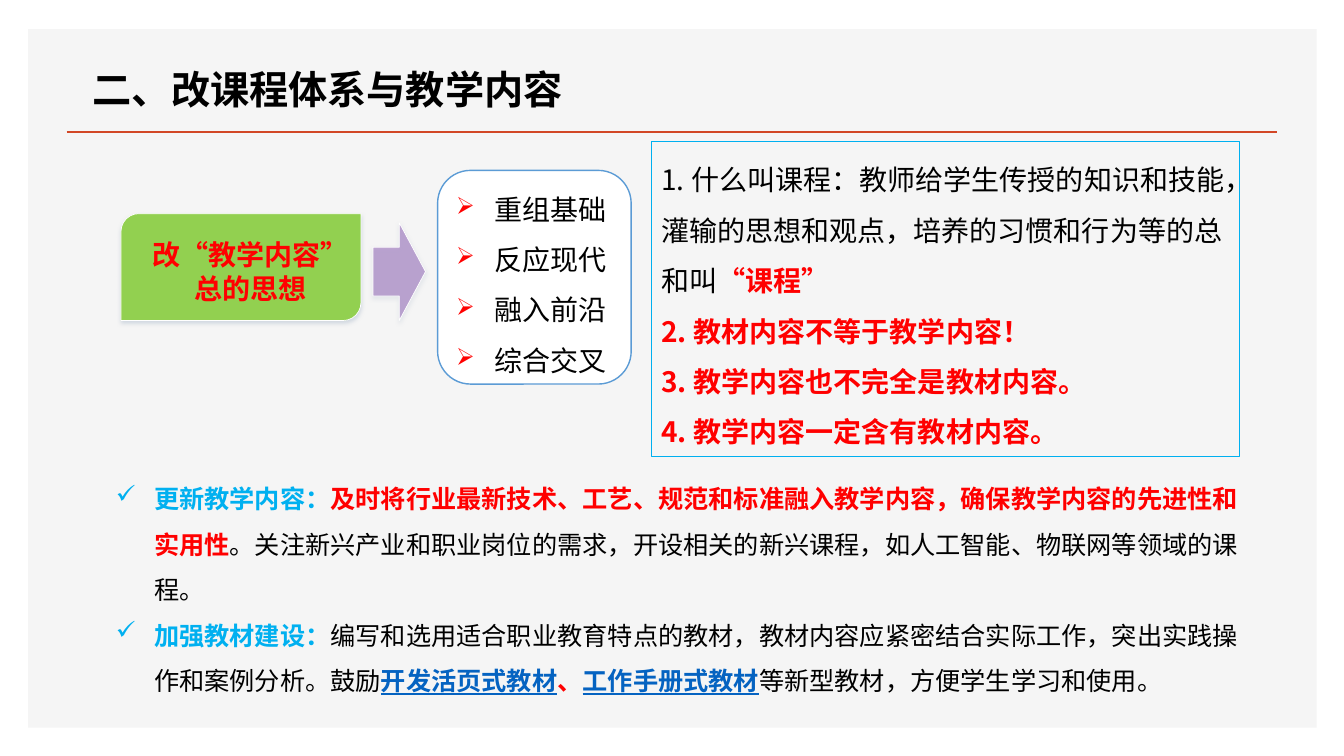
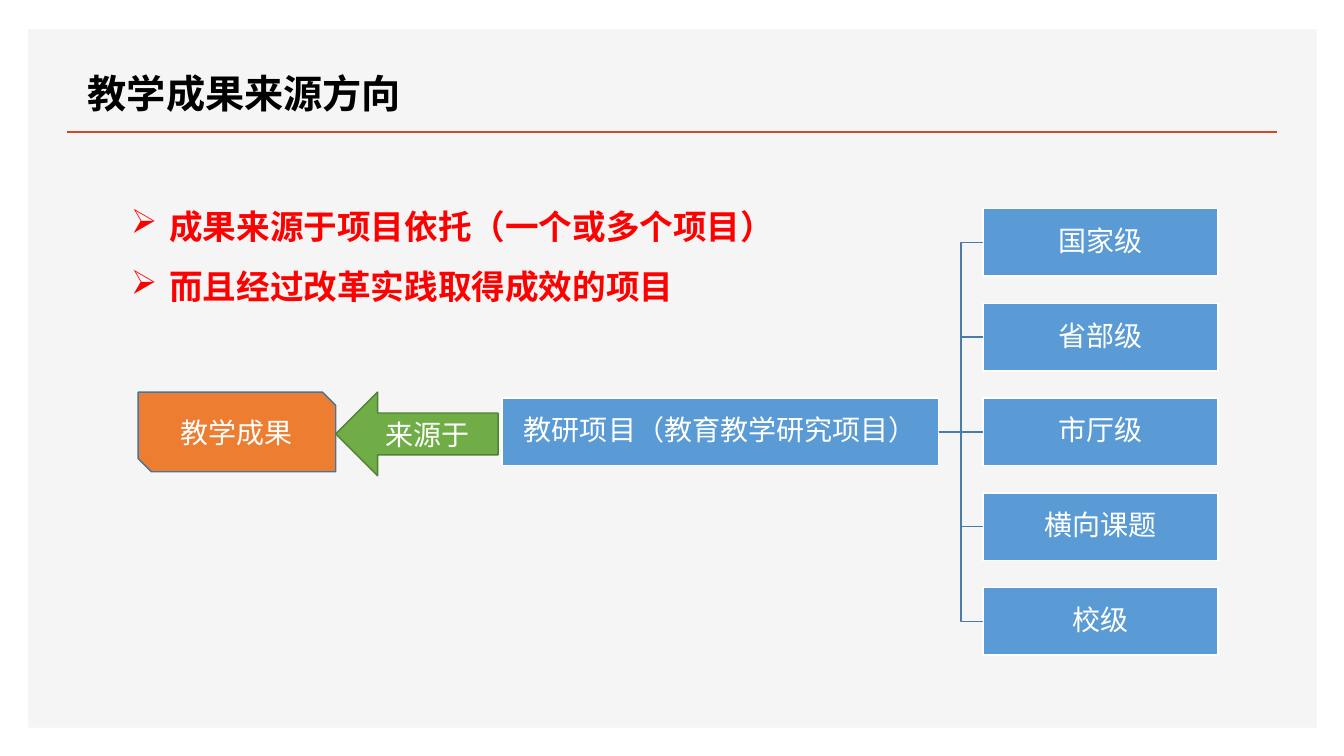
from dataclasses import dataclass

from lxml.etree import SubElement
from pptx import Presentation
from pptx.dml.color import RGBColor
from pptx.enum.shapes import MSO_CONNECTOR, MSO_SHAPE
from pptx.enum.text import MSO_ANCHOR, PP_ALIGN
from pptx.oxml.ns import qn
from pptx.util import Inches, Pt


@dataclass(frozen=True)
class Theme:
    sans: str = "Noto Sans CJK SC"
    lato: str = "Lato"
    black: str = "000000"
    white: str = "FFFFFF"
    panel: str = "F5F5F5"
    rule: str = "D24726"
    red: str = "FF0000"
    cyan: str = "00B0F0"
    link: str = "0563C1"
    blue: str = "5B9BD5"
    wire: str = "497CAB"
    edge: str = "43739E"
    lime: str = "92D050"
    purple: str = "7030A0"
    orange: str = "ED7D31"
    green: str = "70AD47"
    moss: str = "538035"
    shade: str = "CCD4DE"
    title: int = 28
    lead: int = 24
    text: int = 20
    body: int = 18


T = Theme()


def rgb(code):
    return RGBColor.from_string(code)


def style(run, size, color, bold=False, under=False, font=T.sans):
    face = run.font
    face.size, face.bold, face.underline = Pt(size), bold, under
    face.color.rgb = rgb(color)
    face.name = font
    SubElement(run._r.get_or_add_rPr(), qn("a:ea"), typeface=T.sans)


def bullet(para, char, color=None, scale=None):
    props = para._p.get_or_add_pPr()
    props.set("marL", str(Inches(0.38)))
    props.set("indent", str(-Inches(0.38)))
    if color:
        SubElement(SubElement(props, qn("a:buClr")), qn("a:srgbClr"), val=color)
    if scale:
        SubElement(props, qn("a:buSzPct"), val=str(scale * 1000))
    SubElement(props, qn("a:buChar"), char=char)


def write(shape, paras, align=PP_ALIGN.LEFT, anchor=MSO_ANCHOR.TOP, wrap=True,
          inset=None, space=None, mark=None, **base):
    """Fill a shape; a paragraph is a string or a list of (text, format) runs."""
    frame = shape.text_frame
    frame.word_wrap, frame.vertical_anchor = wrap, anchor
    if inset is not None:
        frame.margin_left = frame.margin_right = Inches(inset)
        frame.margin_top = frame.margin_bottom = Inches(inset)
    for i, runs in enumerate(paras):
        para = frame.add_paragraph() if i else frame.paragraphs[0]
        para.alignment = align
        if space:
            para.line_spacing = space
        if mark:
            bullet(para, **mark)
        for text, extra in [(runs, {})] if isinstance(runs, str) else runs:
            run = para.add_run()
            run.text = text
            style(run, **{**base, **extra})


def place(shape, box):
    shape.left, shape.top, shape.width, shape.height = map(Inches, box)


def label(slide, box, paras, **form):
    area = slide.shapes.add_textbox(*map(Inches, box))
    write(area, paras, **form)
    return area


def block(slide, kind, box, fill=None, line=None, width=1):
    shape = slide.shapes.add_shape(kind, *map(Inches, box))
    shape.shadow.inherit = False
    if fill:
        shape.fill.solid()
        shape.fill.fore_color.rgb = rgb(fill)
    else:
        shape.fill.background()
    if line:
        shape.line.color.rgb = rgb(line)
        shape.line.width = Pt(width)
    else:
        shape.line.fill.background()
    return shape


def opaque(color, part):
    SubElement(color, qn("a:alpha"), val=str(part * 1000))


def shade(shape):
    """Add a soft shadow below the shape."""
    group = shape.element.spPr.find(qn("a:effectLst"))
    drop = SubElement(group, qn("a:outerShdw"), blurRad=str(Pt(3.1)),
                      dist=str(Pt(2)), dir="5400000", rotWithShape="0")
    opaque(SubElement(drop, qn("a:srgbClr"), val=T.shade), 83)


def wire(slide, kind, start, end, color, width):
    line = slide.shapes.add_connector(kind, *map(Inches, start + end))
    line.line.color.rgb = rgb(color)
    line.line.width = Pt(width)
    SubElement(line.element.spPr, qn("a:effectLst"))
    return line


def frame(slide):
    """Draw the panel and rule once and move them to the shared layout."""
    panel = block(slide, MSO_SHAPE.RECTANGLE, (0.28, 0.29, 12.78, 6.93), T.panel)
    rule = wire(slide, MSO_CONNECTOR.STRAIGHT, (0.66, 1.31), (12.67, 1.31),
                T.rule, 2)
    tree = slide.slide_layout.shapes.element
    for i, part in enumerate((panel, rule)):
        part.element.xpath("./*/p:cNvPr")[0].set("id", str(101 + i))
        tree.insert(2 + i, part.element)


def start(deck, title, box):
    slide = deck.slides.add_slide(deck.slide_layouts[5])
    place(slide.shapes.title, box)
    write(slide.shapes.title, [title], wrap=False, size=T.title,
          color=T.black, bold=True)
    return slide


def idea(slide):
    """Draw the guiding idea, its arrow and the four principles."""
    card = block(slide, MSO_SHAPE.ROUNDED_RECTANGLE, (4.34, 1.69, 1.92, 2.12),
                 T.white, T.blue)
    card.adjustments[0] = 0.17
    label(slide, (4.18, 1.69, 2.18, 2.12),
          ["重组基础", "反应现代", "融入前沿", "综合交叉"],
          align=PP_ALIGN.CENTER, space=1.5, size=T.text, color=T.black,
          mark=dict(char="➢", color=T.red, scale=85))
    shade(block(slide, MSO_SHAPE.ROUND_2_DIAG_RECTANGLE,
                (1.2, 2.12, 2.38, 1.06), T.lime, T.white, 0.5))
    arrow = block(slide, MSO_SHAPE.RIGHT_ARROW, (3.7, 2.21, 0.52, 0.97),
                  T.purple, T.white, 0.5)
    opaque(arrow.element.spPr.find(qn("a:solidFill"))[0], 39)
    shade(arrow)
    area = label(slide, (1.41, 2.31, 2.17, 0.77), ["改“教学内容”", "总的思想"],
                 wrap=False, size=T.text, color=T.red, bold=True)
    area.text_frame.paragraphs[1].alignment = PP_ALIGN.CENTER


def course(deck):
    slide = start(deck, "二、改课程体系与教学内容", (0.82, 0.6, 4.91, 0.57))
    frame(slide)
    head = dict(color=T.cyan, bold=True)
    key = dict(color=T.red, bold=True)
    link = dict(color=T.link, bold=True, under=True)
    label(slide, (1.05, 4.6, 11.45, 2.37), [
        [("更新教学内容：", head),
         ("及时将行业最新技术、工艺、规范和标准融入教学内容，"
          "确保教学内容的先进性和实用性", key),
         ("。关注新兴产业和职业岗位的需求，开设相关的新兴课程，"
          "如人工智能、物联网等领域的课程。", {})],
        [("加强教材建设：", head),
         ("编写和选用适合职业教育特点的教材，教材内容应紧密结合实际工作，"
          "突出实践操作和案例分析。鼓励", {}),
         ("开发活页式教材", link), ("、", key), ("工作手册式教材", link),
         ("等新型教材，方便学生学习和使用。", {})],
    ], space=1.5, mark=dict(char="✓"), size=T.body, color=T.black)
    notes = block(slide, MSO_SHAPE.RECTANGLE, (6.46, 1.4, 5.83, 3.13),
                  line=T.cyan, width=0.75)
    write(notes, [
        [("1.什么叫课程：教师给学生传授的知识和技能，灌输的思想和观点，"
          "培养的习惯和行为等的总和叫", dict(color=T.black, bold=False)),
         ("“课程”", {})],
        "2.教材内容不等于教学内容！",
        "3.教学内容也不完全是教材内容。",
        "4.教学内容一定含有教材内容。",
    ], space=1.5, size=T.text, **key)
    idea(slide)


def node(slide, text, box):
    shape = block(slide, MSO_SHAPE.RECTANGLE, box, T.blue, T.white)
    write(shape, [text], align=PP_ALIGN.CENTER, anchor=MSO_ANCHOR.MIDDLE,
          inset=0.01, space=0.9, size=T.text, color=T.white, font=T.lato)
    return shape


def levels(slide):
    """Draw the project root and its evenly spaced levels."""
    tall, top, gap, mid = 0.67, 2.07, 0.94, 2
    root = node(slide, "教研项目（教育教学研究项目）",
                (4.98, top + mid * gap, 4.33, tall))
    names = ["国家级", "省部级", "市厅级", "横向课题", "校级"]
    for i, name in enumerate(names):
        leaf = node(slide, name, (9.75, top + i * gap, 2.33, tall))
        kind = MSO_CONNECTOR.STRAIGHT if i == mid else MSO_CONNECTOR.ELBOW
        half = top + tall / 2
        line = wire(slide, kind, (9.31, half + mid * gap),
                    (9.75, half + i * gap), T.wire, 1)
        line.begin_connect(root, 3)
        line.end_connect(leaf, 1)


def source(deck):
    slide = start(deck, "教学成果来源方向", (0.77, 0.64, 3.34, 0.57))
    levels(slide)
    for kind, box, fill, line, text in (
        (MSO_SHAPE.SNIP_2_DIAG_RECTANGLE, (1.37, 3.89, 1.96, 0.79),
         T.orange, T.edge, "教学成果"),
        (MSO_SHAPE.LEFT_ARROW, (3.33, 3.89, 1.61, 0.83),
         T.green, T.moss, "来源于"),
    ):
        write(block(slide, kind, box, fill, line), [text],
              align=PP_ALIGN.CENTER, anchor=MSO_ANCHOR.MIDDLE,
              size=T.text, color=T.white, font=T.lato)
    label(slide, (1.2, 1.79, 7.17, 1.31),
          ["成果来源于项目依托（一个或多个项目）", "而且经过改革实践取得成效的项目"],
          space=1.5, mark=dict(char="➢"), size=T.lead, color=T.red, bold=True)


def main():
    deck = Presentation()
    deck.slide_width, deck.slide_height = Inches(13.33), Inches(7.5)
    course(deck)
    source(deck)
    deck.save("out.pptx")


if __name__ == "__main__":
    main()
